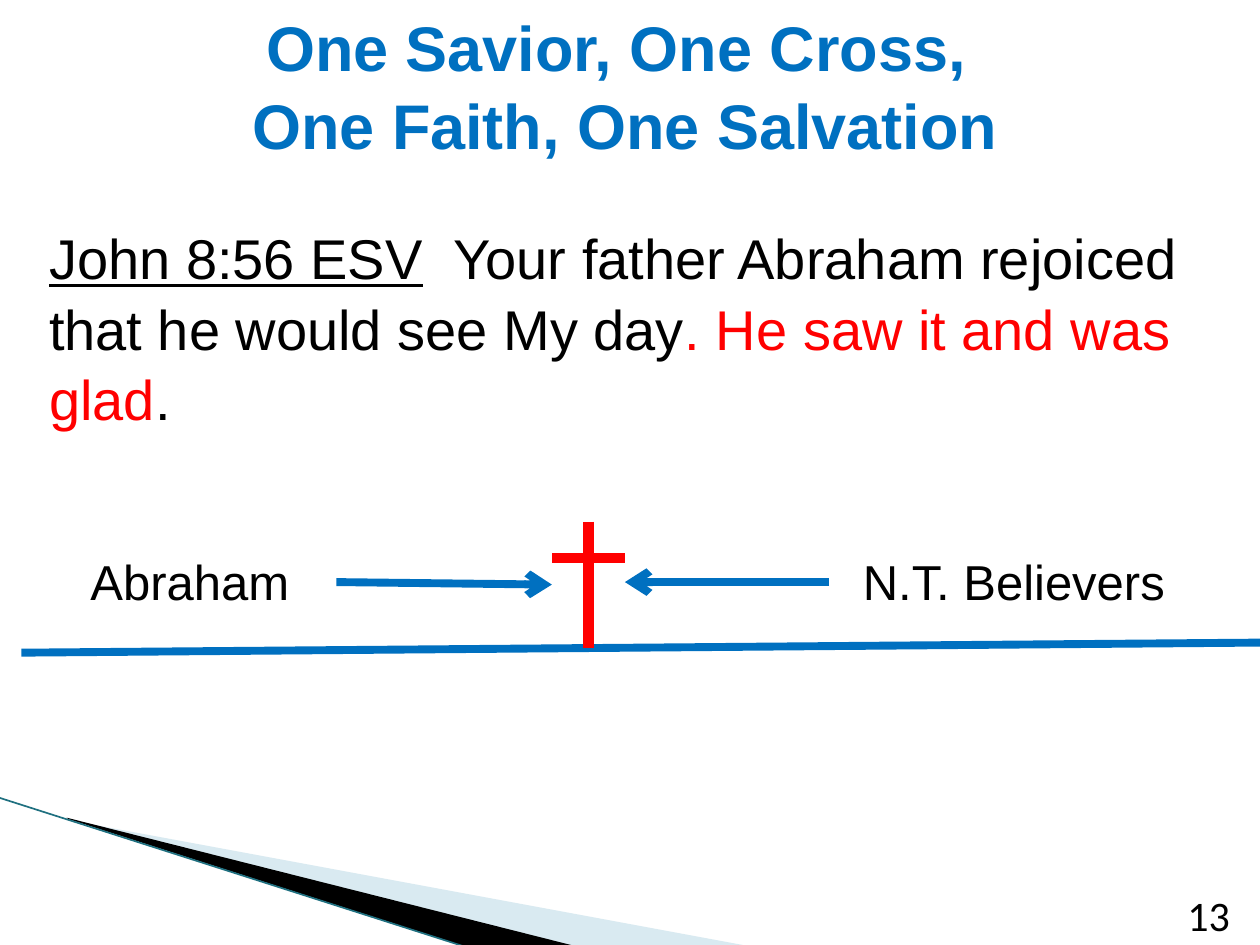
import pptx
import pptx.util
import pptx.dml.color
import pptx.enum.shapes
import pptx.enum.text
import pptx.oxml
import pptx.oxml.ns
from pptx.util import Inches

BLUE, RED, BLACK = "0070C0", "FF0000", "000000"
ALIGN = pptx.enum.text.PP_ALIGN


def color(value):
    return pptx.dml.color.RGBColor.from_string(value)


def add_text(box, runs, size, font="Arial", align=ALIGN.LEFT, bold=False):
    tb = s.shapes.add_textbox(*[Inches(v) for v in box])
    tf = tb.text_frame
    tf.word_wrap = True
    p = tf.paragraphs[0]
    p.text = runs[0][0]
    for text, _ in runs[1:]:
        p.add_run().text = text
    p.alignment = align
    # A line break splits the first text into several runs of one colour
    extra = len(p.runs) - len(runs)
    colors = [runs[0][1]] * extra + [c for _, c in runs]
    for r, c in zip(p.runs, colors):
        r.font.size = pptx.util.Pt(size)
        r.font.name = font
        r.font.bold = bold
        r.font.color.rgb = color(c)
    return tf


prs = pptx.Presentation()
prs.slide_width, prs.slide_height = Inches(10), Inches(7.5)
s = prs.slides.add_slide(prs.slide_layouts[6])

# Corner wedges: points, fill, opacity in percent
wedges = [
    ([(0.55, 6.51), (5.95, 7.51), (4.56, 7.51), (0.55, 6.5)], "A0CBDC", 40),
    ([(0.53, 6.49), (4.57, 7.51), (3.72, 7.52), (0.54, 6.5)], BLACK, 100),
]
for points, fill, opacity in wedges:
    pts = [(Inches(x), Inches(y)) for x, y in points]
    fb = s.shapes.build_freeform(*pts[0])
    fb.add_line_segments(pts[1:], close=True)
    sp = fb.convert_to_shape()
    sp.shadow.inherit = False
    sp.fill.solid()
    sp.fill.fore_color.rgb = color(fill)
    sp.line.fill.background()
    if opacity < 100:
        clr = sp.fill._xPr.find(".//" + pptx.oxml.ns.qn("a:srgbClr"))
        alpha = pptx.oxml.parse_xml(
            f'<a:alpha {pptx.oxml.ns.nsdecls("a")} val="{opacity * 1000}"/>')
        clr.append(alpha)

# Lines: corner edge, ground, cross, arrows towards the cross
lines = [
    ((-0.01, 6.33), (3.71, 7.52), "1F7080", 0.95, False),
    ((0.17, 5.18), (10, 5.1), BLUE, 4.5, False),
    ((4.67, 4.14), (4.67, 5.14), RED, 6, False),
    ((4.96, 4.43), (4.38, 4.43), RED, 6, False),
    ((2.67, 4.62), (4.38, 4.64), BLUE, 4.5, True),
    ((6.58, 4.62), (4.96, 4.62), BLUE, 4.5, True),
]
for start, end, c, width, arrow in lines:
    cx = s.shapes.add_connector(pptx.enum.shapes.MSO_CONNECTOR.STRAIGHT,
                                *[Inches(v) for v in start + end])
    cx.line.color.rgb = color(c)
    cx.line.width = pptx.util.Pt(width)
    ns = pptx.oxml.ns.nsdecls("a")
    if arrow:
        cx.line._get_or_add_ln().append(
            pptx.oxml.parse_xml(f'<a:tailEnd {ns} type="arrow"/>'))
    cx._element.spPr.append(pptx.oxml.parse_xml(f"<a:effectLst {ns}/>"))

# Title
tf = add_text((0.17, 0, 9.58, 1.25),
              [("One Savior, One Cross, \nOne Faith, One Salvation", BLUE)],
              36, align=ALIGN.CENTER, bold=True)
tf.vertical_anchor = pptx.enum.text.MSO_ANCHOR.MIDDLE
tf.margin_top, tf.margin_bottom = Inches(0.08), 0
tf.paragraphs[0].line_spacing = 1.04

# Verse
tf = add_text((0.17, 1.68, 9.58, 5.24),
              [("John 8:56 ESV", BLACK),
               ("  Your father Abraham rejoiced that he would see My day", BLACK),
               (". He saw it and was glad", RED),
               (".", BLACK)], 32)
tf.margin_left, tf.margin_top = Inches(0.22), Inches(0.07)
p = tf.paragraphs[0]
p.line_spacing = 1.05
p.runs[0].font.underline = True

# Labels beside the cross
add_text((0.62, 4.33, 1.83, 0.57), [("Abraham", BLACK)], 28)
add_text((6.75, 4.33, 2.83, 0.57), [("N.T. Believers", BLACK)], 28)

# Page number
add_text((8.92, 7.01, 0.94, 0.4), [("13", BLACK)], 24, "Calibri", ALIGN.RIGHT)

prs.save("out.pptx")
